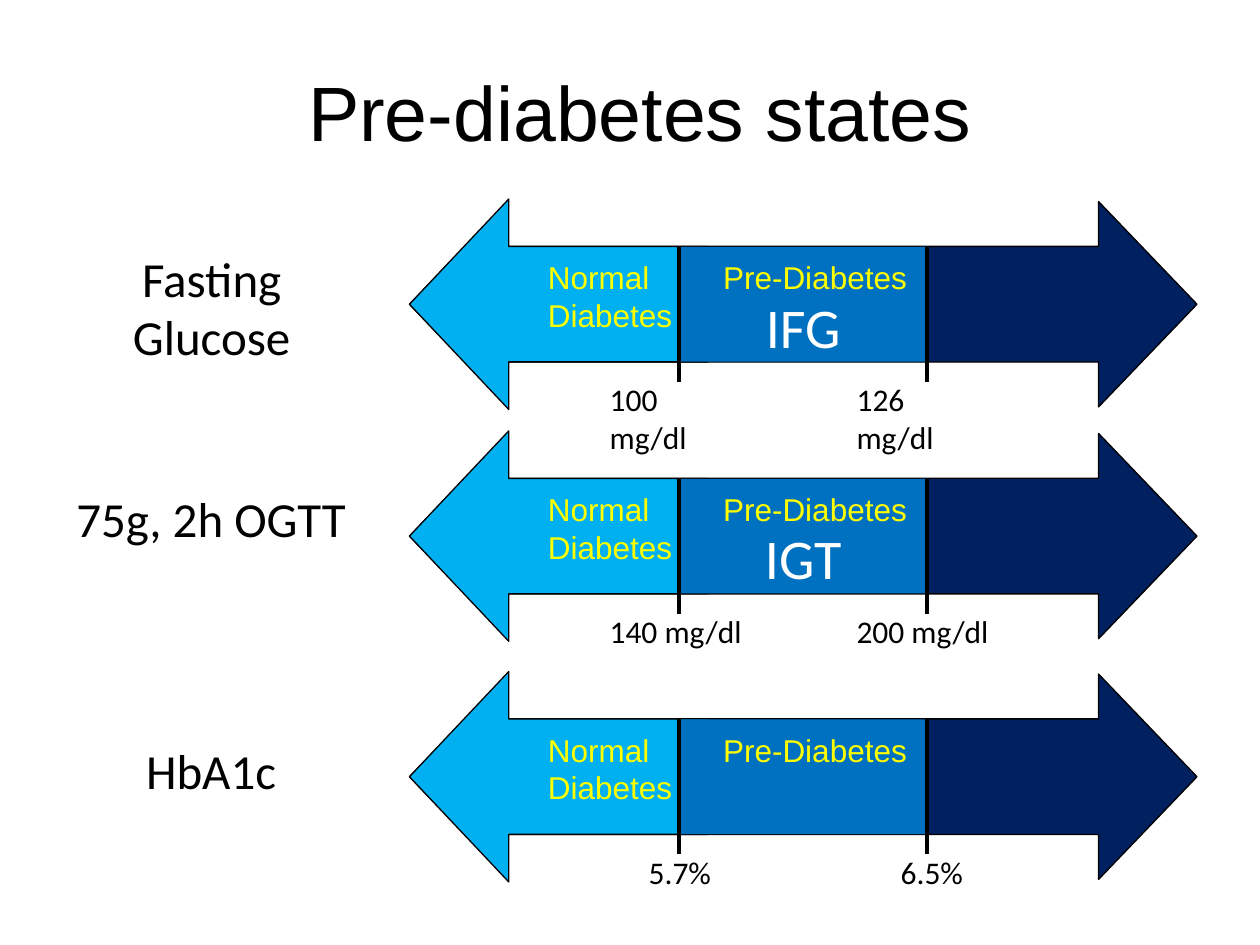
from dataclasses import dataclass

from lxml import etree
from pptx import Presentation
from pptx.dml.color import RGBColor
from pptx.enum.shapes import MSO_CONNECTOR, MSO_SHAPE
from pptx.enum.text import MSO_ANCHOR, PP_ALIGN
from pptx.oxml.ns import qn
from pptx.util import Pt

PX = 9144  # EMU per px, 100 px to the inch
LEFT, CENTER = PP_ALIGN.LEFT, PP_ALIGN.CENTER
TOP, MIDDLE = MSO_ANCHOR.TOP, MSO_ANCHOR.MIDDLE
LEFT_ARROW, BOTH_ARROW = MSO_SHAPE.LEFT_ARROW, MSO_SHAPE.LEFT_RIGHT_ARROW
RECTANGLE, STRAIGHT = MSO_SHAPE.RECTANGLE, MSO_CONNECTOR.STRAIGHT


@dataclass(frozen=True)
class Theme:
    ink: str = "000000"
    white: str = "FFFFFF"
    zone: str = "FFFF00"
    normal: str = "00B0F0"
    pre: str = "0070C0"
    diabetes: str = "002060"
    head: str = "Arial"
    body: str = "Calibri"
    title_size: int = 44
    state_size: int = 32
    test_size: int = 28
    small_size: int = 18
    outline: float = 0.75
    tick: float = 2.25


THEME = Theme()
SCALE = (325, 625, 167)  # left, width and height of every scale
TICKS = (214, 411)  # cut-offs, from the left of the scale
TAB_STOPS = (139, 330)  # zone names, from the left of their text

# test, its box, scale top, state, cut-offs, their lefts and width
ROWS = [
    ("Fasting Glucose", (58, 192, 220, 103), 158, "IFG",
     ("100 mg/dl", "126 mg/dl"), (149, 345), 119),
    ("75g, 2h OGTT", (50, 383, 235, 103), 342, "IGT",
     ("140 mg/dl", "200 mg/dl"), (149, 345), 126),
    ("HbA1c", (105, 583, 125, 57), 533, None,
     ("5.7%", "6.5%"), (180, 380), 70),
]


def emu(*lengths):
    return [v * PX for v in lengths]


def add_text(shapes, box, text, size, font=THEME.body, color=THEME.ink,
             align=CENTER, anchor=TOP):
    tf = shapes.add_textbox(*emu(*box)).text_frame
    tf.word_wrap = True
    tf.vertical_anchor = anchor
    p = tf.paragraphs[0]
    p.text = text
    p.alignment = align
    f = p.runs[0].font
    f.size, f.name = Pt(size), font
    f.color.rgb = RGBColor.from_string(color)
    return p


def add_block(shapes, kind, box, fill, adjustments=()):
    sp = shapes.add_shape(kind, *emu(*box))
    sp.shadow.inherit = False
    sp.fill.solid()
    sp.fill.fore_color.rgb = RGBColor.from_string(fill)
    for i, value in enumerate(adjustments):
        sp.adjustments[i] = value
    if kind == RECTANGLE:
        sp.line.fill.background()
    else:
        sp.line.color.rgb = RGBColor.from_string(THEME.ink)
        sp.line.width = Pt(THEME.outline)


def add_tick(shapes, x, top, bottom):
    line = shapes.add_connector(STRAIGHT, *emu(x, top, x, bottom))
    line.line.color.rgb = RGBColor.from_string(THEME.ink)
    line.line.width = Pt(THEME.tick)
    etree.SubElement(line._element.spPr, qn("a:effectLst"))


def set_tabs(p, stops):
    tabs = etree.SubElement(p._p.get_or_add_pPr(), qn("a:tabLst"))
    for stop in stops:
        etree.SubElement(tabs, qn("a:tab"), pos=str(stop * PX), algn="l")


def add_scale(slide, box, state, values, value_lefts, value_width):
    x, y, w, h = box
    shapes = slide.shapes.add_group_shape().shapes

    # Three zones
    add_block(shapes, BOTH_ARROW, (x, y + 2, w, h - 4), THEME.diabetes,
              (0.563, 0.479))
    add_block(shapes, LEFT_ARROW, (x, y, 237, h), THEME.normal, (0.548, 0.472))
    add_block(shapes, RECTANGLE,
              (x + TICKS[0], y + 38, TICKS[1] - TICKS[0] + 1, 91), THEME.pre)

    # Cut-off values and ticks
    for value, left, tick in zip(values, value_lefts, TICKS):
        add_text(shapes, (x + left, y + 139, value_width, 40), value,
                 THEME.small_size, align=LEFT)
        add_tick(shapes, x + tick, y + 38, y + 145)

    # Zone names and state
    p = add_text(shapes, (x + 100, y + 42, 441, 27),
                 "Normal\tPre-Diabetes\tDiabetes", THEME.small_size,
                 THEME.head, THEME.zone, LEFT)
    set_tabs(p, TAB_STOPS)
    if state:
        add_text(shapes, (x + 252, y + 69, 121, 64), state, THEME.state_size,
                 color=THEME.white)


def main():
    prs = Presentation()
    prs.slide_width, prs.slide_height = emu(1000, 750)
    s = prs.slides.add_slide(prs.slide_layouts[6])

    # Title
    add_text(s.shapes, (83, 25, 850, 125), "Pre-diabetes states",
             THEME.title_size, THEME.head, anchor=MIDDLE)

    # One scale for each test
    left, width, height = SCALE
    for test, test_box, top, *details in ROWS:
        add_text(s.shapes, test_box, test, THEME.test_size)
        add_scale(s, (left, top, width, height), *details)

    prs.save("out.pptx")


if __name__ == "__main__":
    main()
